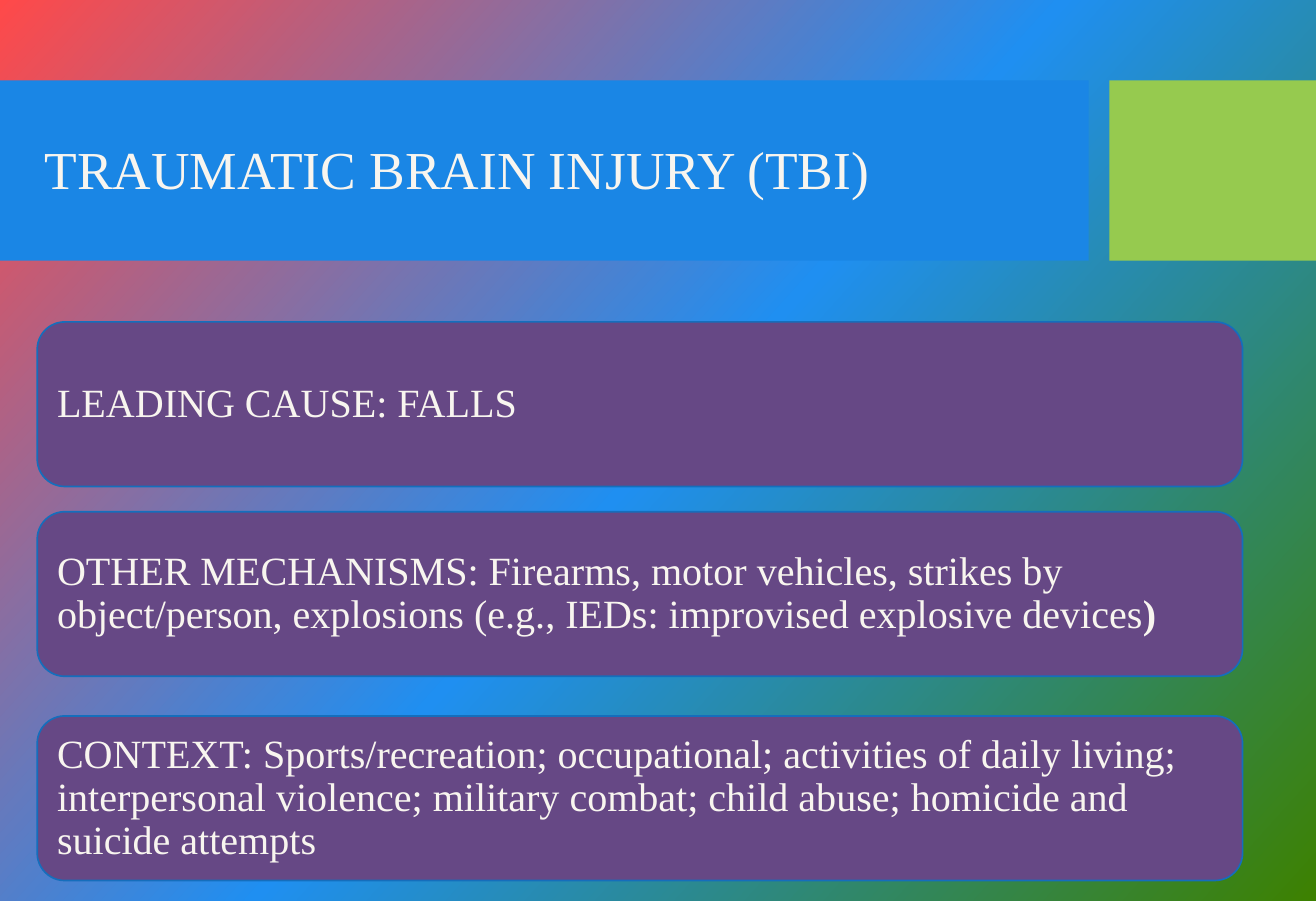
import copy

import pptx
import pptx.dml.color
import pptx.enum.shapes
import pptx.enum.text
import pptx.oxml.ns
import pptx.util

RGBColor = pptx.dml.color.RGBColor
Inches = pptx.util.Inches
SHAPE = pptx.enum.shapes.MSO_SHAPE

# Content
TITLE = "TRAUMATIC BRAIN INJURY (TBI)"
# Each card: top in inches, then (text, bold) spans
CARDS = [
    (2.68, [("LEADING CAUSE: FALLS", False)]),
    (4.26, [("OTHER MECHANISMS: Firearms, motor vehicles, strikes by object/person, "
             "explosions (e.g., IEDs: improvised explosive devices", False), (")", True)]),
    (5.96, [("CONTEXT: Sports/recreation; occupational; activities of daily living; "
             "interpersonal violence; military combat; child abuse; homicide and "
             "suicide attempts", False)]),
]

# Format
FONT = "Times New Roman"
CREAM = RGBColor(0xF8, 0xF5, 0xEF)
BLUE = RGBColor(0x1A, 0x86, 0xE5)
GREEN = RGBColor(0x96, 0xCA, 0x4F)
PURPLE = RGBColor(0x66, 0x48, 0x85)
OUTLINE = RGBColor(0x15, 0x6E, 0xBC)
BACKGROUND = [
    (0, RGBColor(0xFF, 0x49, 0x49)),
    (0.5, RGBColor(0x1F, 0x8F, 0xF1)),
    (1, RGBColor(0x3D, 0x81, 0x00)),
]
GRADIENT_ANGLE = 360 - 42

# Layout in inches
WIDTH, HEIGHT = 10.95, 7.5
BAND_TOP, BAND_HEIGHT = 0.67, 1.5
BAND_SPLIT, BAND_GAP = 9.06, 0.17
CARD_LEFT, CARD_WIDTH, CARD_HEIGHT = 0.31, 10.03, 1.37


def write_text(shape, spans, size, margin):
    frame = shape.text_frame
    frame.word_wrap = True
    frame.auto_size = pptx.enum.text.MSO_AUTO_SIZE.NONE
    frame.vertical_anchor = pptx.enum.text.MSO_ANCHOR.MIDDLE
    frame.margin_left = Inches(margin)
    frame.margin_right = Inches(0.17)
    para = frame.paragraphs[0]
    para.alignment = pptx.enum.text.PP_ALIGN.LEFT
    para.line_spacing = 0.9
    for text, bold in spans:
        span = para.add_run()
        span.text = text
        span.font.name = FONT
        span.font.size = pptx.util.Pt(size)
        span.font.bold = bold
        span.font.color.rgb = CREAM


def add_block(page, kind, left, top, width, height, color, outline=None):
    block = page.shapes.add_shape(kind, Inches(left), Inches(top), Inches(width), Inches(height))
    block.shadow.inherit = False
    block.fill.solid()
    block.fill.fore_color.rgb = color
    if outline is None:
        block.line.fill.background()
    else:
        block.line.color.rgb = outline
        block.line.width = pptx.util.Pt(1)
    return block


def paint_background(page):
    fill = page.background.fill
    fill.gradient()
    fill.gradient_angle = GRADIENT_ANGLE
    stop_list = page.element.find(".//" + pptx.oxml.ns.qn("a:gsLst"))
    stop_list.append(copy.deepcopy(stop_list[-1]))
    for stop, (position, color) in zip(fill.gradient_stops, BACKGROUND):
        stop.position = position
        stop.color.rgb = color


def main():
    deck = pptx.Presentation()
    deck.slide_width, deck.slide_height = Inches(WIDTH), Inches(HEIGHT)
    page = deck.slides.add_slide(deck.slide_layouts[5])
    paint_background(page)

    # Title bands, then the title brought in front of them
    title = page.shapes.title
    green_left = BAND_SPLIT + BAND_GAP
    for left, right, color in [(0, BAND_SPLIT, BLUE), (green_left, WIDTH, GREEN)]:
        band = add_block(page, SHAPE.RECTANGLE, left, BAND_TOP, right - left, BAND_HEIGHT, color)
        title.element.addprevious(band.element)
    title.left, title.top = Inches(0.14), Inches(0.84)
    title.width, title.height = Inches(9.1), Inches(1.18)
    write_text(title, [(TITLE, False)], size=32, margin=0.23)

    # Cards
    for top, spans in CARDS:
        card = add_block(page, SHAPE.ROUNDED_RECTANGLE, CARD_LEFT, top,
                         CARD_WIDTH, CARD_HEIGHT, PURPLE, outline=OUTLINE)
        # The rounded corner adds about 0.07 to the margin
        write_text(card, spans, size=24, margin=0.1)

    deck.save("out.pptx")


if __name__ == "__main__":
    main()
